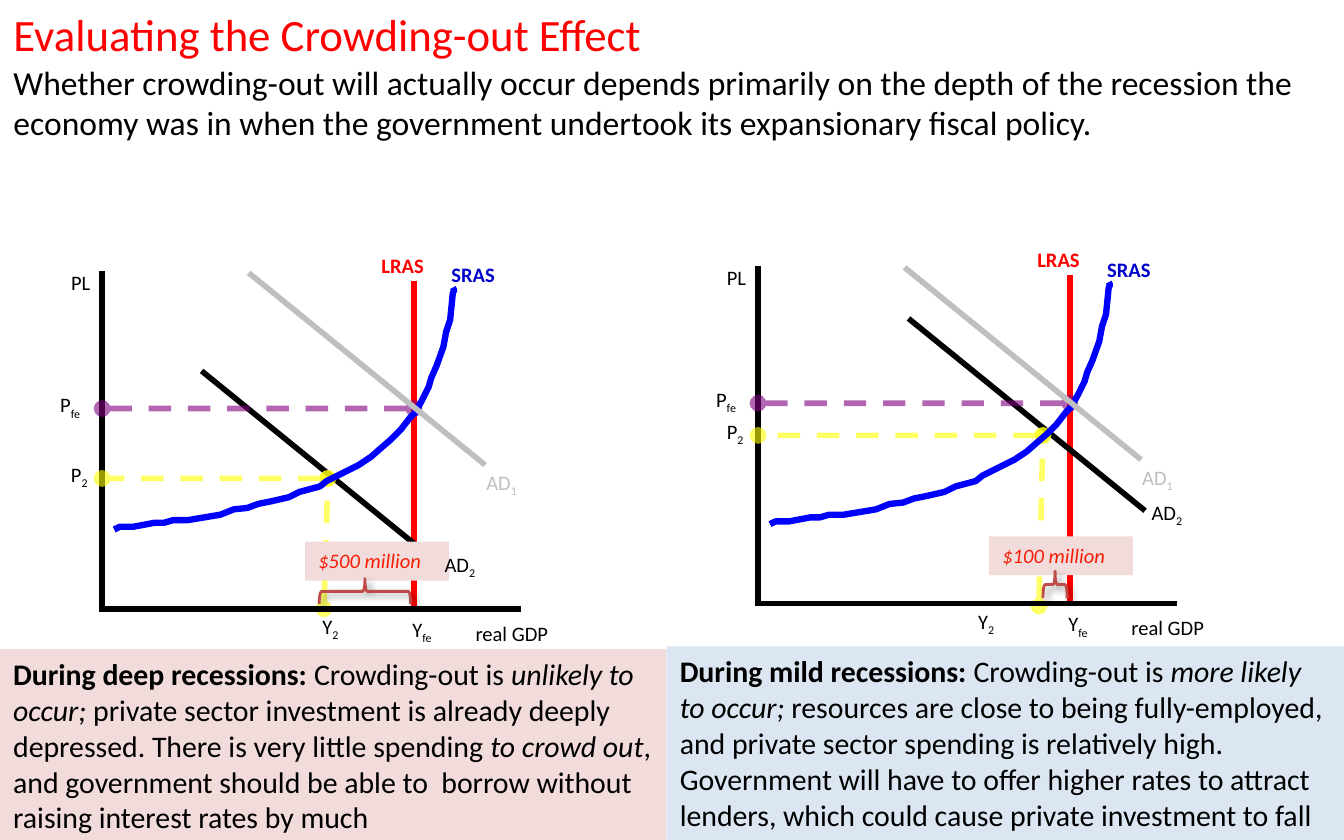
import pptx
import pptx.dml.color
import pptx.enum.dml
import pptx.enum.shapes
import pptx.enum.text
import pptx.oxml
import pptx.oxml.ns
import pptx.util
from pptx.util import Inches

rgb = pptx.dml.color.RGBColor.from_string
qn = pptx.oxml.ns.qn
kinds = pptx.enum.shapes.MSO_SHAPE
NS = 'xmlns:a="http://schemas.openxmlformats.org/drawingml/2006/main"'


def write(para, text, size=11, color="000000", bold=False, italic=False, sub=False):
    run = para.add_run()
    run.text = text
    run.font.name = "Calibri"
    run.font.size = pptx.util.Pt(size)
    run.font.color.rgb = rgb(color)
    run.font.bold = bold
    run.font.italic = italic
    if sub:
        run._r.get_or_add_rPr().set("baseline", "-25000")


def line(x1, y1, x2, y2, color, guide=False):
    """Draw a 3 pt line; a guide is dashed, see-through and has round ends."""
    item = slide.shapes.add_connector(
        pptx.enum.shapes.MSO_CONNECTOR.STRAIGHT,
        Inches(x1), Inches(y1), Inches(x2), Inches(y2))
    item.line.color.rgb = rgb(color)
    item.line.width = pptx.util.Pt(3)
    props = item._element.spPr
    if guide:
        item.line.dash_style = pptx.enum.dml.MSO_LINE.DASH
        tint = next(props.iter(qn("a:srgbClr")))
        tint.append(pptx.oxml.parse_xml(f'<a:alpha {NS} val="60000"/>'))
        for end in ("headEnd", "tailEnd"):
            props.find(qn("a:ln")).append(
                pptx.oxml.parse_xml(f'<a:{end} {NS} type="oval"/>'))
    props.append(pptx.oxml.parse_xml(f"<a:effectLst {NS}/>"))


deck = pptx.Presentation()
deck.slide_width, deck.slide_height = Inches(10), Inches(6.25)
slide = deck.slides.add_slide(deck.slide_layouts[1])

# Heading and introduction
heads = [
    (slide.shapes.title, 0, 0.46, 0.05, 24, "FF0000", "Evaluating the Crowding-out Effect"),
    (slide.placeholders[1], 0.46, 0.65, 0, 18, "000000",
     "Whether crowding-out will actually occur depends primarily on the depth of the "
     "recession the economy was in when the government undertook its expansionary "
     "fiscal policy."),
]
for holder, top, height, inset, size, color, text in heads:
    holder.left, holder.top = Inches(0), Inches(top)
    holder.width, holder.height = Inches(10), Inches(height)
    frame = holder.text_frame
    frame.auto_size = pptx.enum.text.MSO_AUTO_SIZE.NONE
    frame.vertical_anchor = pptx.enum.text.MSO_ANCHOR.TOP
    frame.margin_top, frame.margin_bottom = Inches(inset), 0
    para = frame.paragraphs[0]
    para.alignment = pptx.enum.text.PP_ALIGN.LEFT
    para.space_before = 0
    props = para._p.get_or_add_pPr()
    props.set("marL", "0")
    props.set("indent", "0")
    props.append(pptx.oxml.parse_xml(f"<a:buNone {NS}/>"))
    write(para, text, size=size, color=color)

# Conclusions below the graphs: text, bold, italic
panels = [
    (0, 4.83, 4.96, "F2DCDB", [
        ("During deep recessions: ", True, False),
        ("Crowding-out is ", False, False),
        ("unlikely to occur; ", False, True),
        ("private sector investment is already deeply depressed. "
         "There is very little spending ", False, False),
        ("to crowd out", False, True),
        (", and government should be able to  borrow without raising "
         "interest rates by much", False, False)]),
    (4.96, 4.81, 5.04, "DCE6F2", [
        ("During mild recessions: ", True, False),
        ("Crowding-out is ", False, False),
        ("more likely to occur; ", False, True),
        ("resources are close to being fully-employed, and private sector spending "
         "is relatively high. Government will have to offer higher rates to attract "
         "lenders, which could cause private investment to fall", False, False)]),
]
for left, top, width, fill, runs in panels:
    panel = slide.shapes.add_shape(
        kinds.RECTANGLE, Inches(left), Inches(top), Inches(width), Inches(1.45))
    panel.shadow.inherit = False
    panel.fill.solid()
    panel.fill.fore_color.rgb = rgb(fill)
    panel.line.fill.background()
    panel.text_frame.vertical_anchor = pptx.enum.text.MSO_ANCHOR.TOP
    para = panel.text_frame.paragraphs[0]
    para.alignment = pptx.enum.text.PP_ALIGN.LEFT
    for text, bold, italic in runs:
        write(para, text, size=16, bold=bold, italic=italic)

# Supply curve, in the coordinates of the left graph
curve = [
    (0.85, 3.94), (0.89, 3.92), (0.99, 3.92), (1.15, 3.89), (1.22, 3.89), (1.29, 3.87),
    (1.4, 3.87), (1.52, 3.85), (1.64, 3.83), (1.74, 3.79), (1.84, 3.78), (1.92, 3.75),
    (2.02, 3.73), (2.15, 3.7), (2.23, 3.66), (2.38, 3.62), (2.43, 3.58), (2.51, 3.54),
    (2.59, 3.5), (2.67, 3.46), (2.76, 3.4), (2.84, 3.33), (2.91, 3.27), (2.98, 3.2),
    (3.05, 3.11), (3.09, 3.07), (3.14, 2.98), (3.19, 2.88), (3.21, 2.81), (3.25, 2.72),
    (3.3, 2.58), (3.32, 2.47), (3.35, 2.38), (3.36, 2.28), (3.37, 2.18), (3.38, 2.16),
    (3.37, 2.14),
]

# Per graph: offset, start of AD2, equilibrium, foot, AD2 label, gap label, brace
graphs = [
    (0, 0, (1.5, 2.76), (2.44, 3.56), (2.41, 4.53), (3.21, 4.06),
     2.27, "$500 million", (2.62, 4.06, 0.19, 0.68)),
    (4.88, -0.04, (1.88, 2.41), (2.88, 3.28), (2.85, 4.55), (3.59, 3.71),
     2.48, "$100 million", (2.87, 4.3, 0.2, 0.18)),
]
for dx, dy, demand, meet, foot, tag, gap, amount, brace in graphs:
    lines = [
        (3.08, 4.55, 3.08, 2.09, "FF0000", False),
        (*demand, demand[0] + 1.76, demand[1] + 1.43, "000000", False),
        (*foot, *meet, "FFFF00", True),
        (0.76, 2.02, 0.76, 4.52, "000000", False),
        (0.74, 4.53, 3.88, 4.53, "000000", False),
        (3.08, 3.04, 0.76, 3.04, "800080", True),
        (*meet, 0.76, meet[1], "FFFF00", True),
    ]
    for x1, y1, x2, y2, color, guide in lines:
        line(x1 + dx, y1 + dy, x2 + dx, y2 + dy, color, guide)

    points = [(Inches(x + dx), Inches(y + dy)) for x, y in curve]
    pen = slide.shapes.build_freeform(*points[0])
    pen.add_line_segments(points[1:], close=False)
    supply = pen.convert_to_shape()
    supply.shadow.inherit = False
    supply.fill.background()
    supply.line.color.rgb = rgb("0000FF")
    supply.line.width = pptx.util.Pt(3.4)
    line(1.85 + dx, 2.03 + dy, 3.61 + dx, 3.46 + dy, "BFBFBF")

    labels = [
        (0.43, 1.96, 0.58, "PL", "", {}),
        (3.26, 1.9, 0.63, "SRAS", "", {"color": "0000CC", "bold": True}),
        (2.74, 1.83, 0.63, "LRAS", "", {"color": "FF0000", "bold": True}),
        (3.44, 4.57, 0.96, "real GDP", "", {}),
        (gap, 4.03, 1.07, amount, "", {"color": "F81D06", "italic": True}),
        (0.35, 2.87, 0.4, "P", "fe", {}),
        (2.97, 4.54, 0.42, "Y", "fe", {}),
        (0.43, meet[1] - 0.17, 0.4, "P", "2", {}),
        (2.3, 4.52, 0.4, "Y", "2", {}),
        (3.52, 3.45, 0.63, "AD", "1", {"color": "BFBFBF"}),
        (*tag, 0.63, "AD", "2", {}),
    ]
    for left, top, width, text, index, style in labels:
        box = slide.shapes.add_textbox(
            Inches(left + dx), Inches(top + dy), Inches(width), Inches(0.29))
        box.text_frame.word_wrap = True
        if text == amount:
            box.fill.solid()
            box.fill.fore_color.rgb = rgb("F2DCDB")
        para = box.text_frame.paragraphs[0]
        write(para, text, **style)
        if index:
            write(para, index, sub=True, **style)

    left, top, width, height = brace
    span = slide.shapes.add_shape(
        kinds.LEFT_BRACE, Inches(left + dx), Inches(top + dy), Inches(width), Inches(height))
    span.rotation = 90
    span.fill.background()
    span.line.color.rgb = rgb("BF4C48")
    span.line.width = pptx.util.Pt(1.5)
    span._element.spPr.append(pptx.oxml.parse_xml(
        f'<a:effectLst {NS}><a:outerShdw blurRad="50800" dist="38100" dir="2700000" '
        'rotWithShape="0"><a:srgbClr val="000000"><a:alpha val="40000"/></a:srgbClr>'
        '</a:outerShdw></a:effectLst>'))

deck.save("out.pptx")
